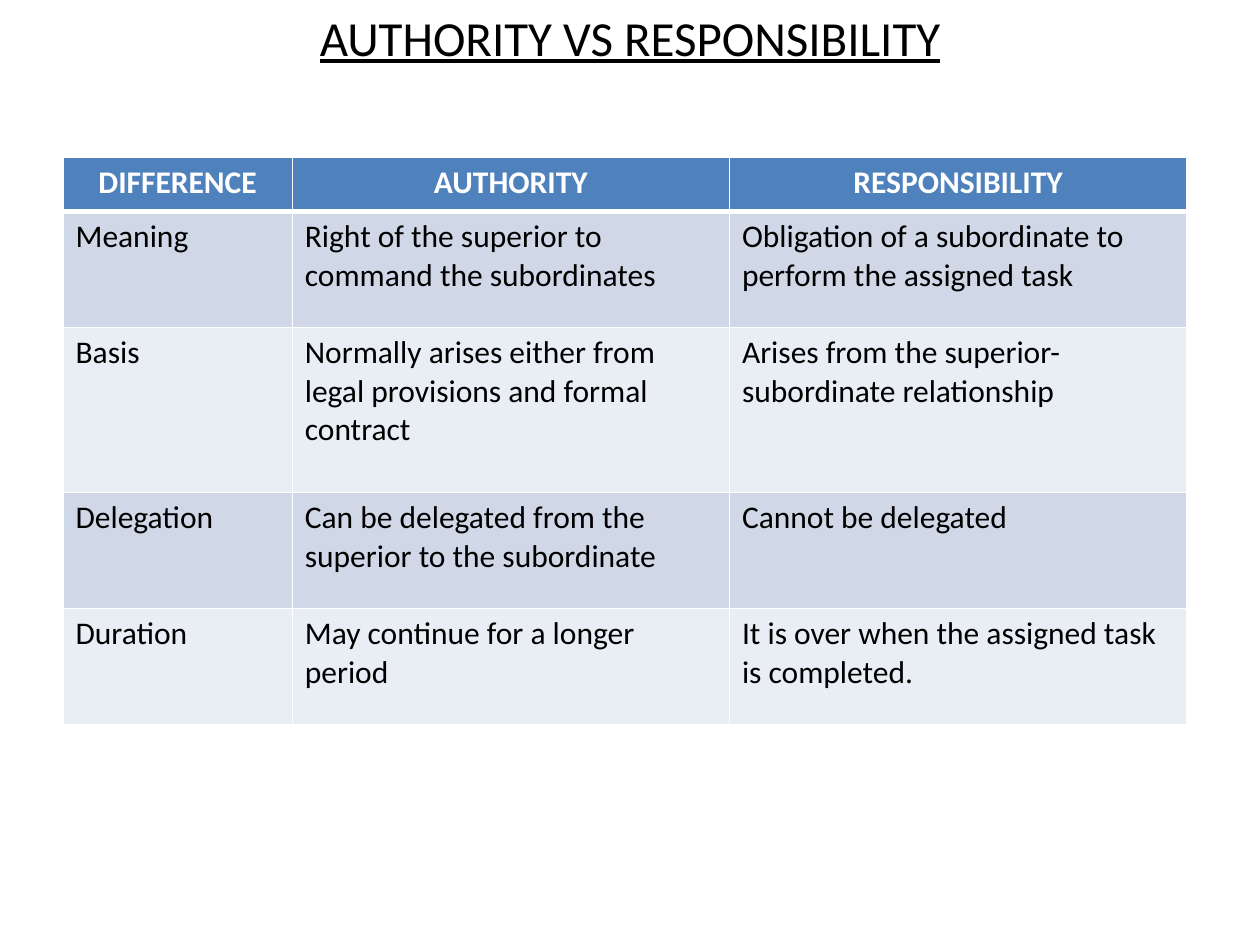
from dataclasses import dataclass

from lxml import etree
from pptx import Presentation
from pptx.dml.color import RGBColor
from pptx.enum.text import MSO_ANCHOR, PP_ALIGN
from pptx.oxml.ns import qn
from pptx.util import Inches, Pt

CENTER, LEFT = PP_ALIGN.CENTER, PP_ALIGN.LEFT
MIDDLE = MSO_ANCHOR.MIDDLE
BLANK_LAYOUT = 6
SLIDE_WIDTH, SLIDE_HEIGHT = Inches(10), Inches(7.5)


@dataclass(frozen=True)
class Theme:
    font: str = "Calibri"
    title_size: int = 28
    table_size: int = 18
    ink: str = "000000"
    white: str = "FFFFFF"
    header: str = "4F81BD"
    bands: tuple[str, str] = ("D0D8E8", "E9EDF4")
    thin_line: int = 1
    thick_line: int = 3


@dataclass(frozen=True)
class Comparison:
    difference: str
    authority: str
    responsibility: str

    def texts(self) -> tuple[str, str, str]:
        return self.difference, self.authority, self.responsibility


THEME = Theme()
MARGIN = 0.05  # share of the slide width
TITLE_HEIGHT = 0.077  # share of the slide height
TABLE_TOP = 1 / 6  # share of the slide height
COLUMN_WIDTHS = (1.82, 3.47, 3.63)
ROW_HEIGHTS = (0.43, 0.92, 1.31, 0.92, 0.92)

ROWS = (
    Comparison("DIFFERENCE", "AUTHORITY", "RESPONSIBILITY"),
    Comparison("Meaning", "Right of the superior to command the subordinates",
               "Obligation of a subordinate to perform the assigned task"),
    Comparison("Basis", "Normally arises either from legal provisions and formal contract",
               "Arises from the superior-subordinate relationship"),
    Comparison("Delegation", "Can be delegated from the superior to the subordinate",
               "Cannot be delegated"),
    Comparison("Duration", "May continue for a longer period",
               "It is over when the assigned task is completed."),
)


def write_text(text_frame, text: str, *, size: int, color: str = THEME.ink,
               align=LEFT, bold: bool = False, underline: bool = False) -> None:
    text_frame.word_wrap = True
    paragraph = text_frame.paragraphs[0]
    paragraph.alignment = align
    run = paragraph.add_run()
    run.text = text
    font = run.font
    font.name, font.size = THEME.font, Pt(size)
    font.bold, font.underline = bold, underline
    font.color.rgb = RGBColor.from_string(color)


def set_borders(cell, top: int, bottom: int) -> None:
    """Draw white borders; the lines must come before the fill in the cell."""
    properties = cell._tc.get_or_add_tcPr()
    widths = {"a:lnL": THEME.thin_line, "a:lnR": THEME.thin_line,
              "a:lnT": top, "a:lnB": bottom}
    for position, (tag, width) in enumerate(widths.items()):
        line = etree.Element(qn(tag), w=str(Pt(width)))
        fill = etree.SubElement(line, qn("a:solidFill"))
        etree.SubElement(fill, qn("a:srgbClr"), val=THEME.white)
        properties.insert(position, line)


def add_title(slide, text: str) -> None:
    box = slide.shapes.add_textbox(
        int(SLIDE_WIDTH * MARGIN), 0,
        int(SLIDE_WIDTH * (1 - 2 * MARGIN)), int(SLIDE_HEIGHT * TITLE_HEIGHT))
    box.text_frame.vertical_anchor = MIDDLE
    write_text(box.text_frame, text, size=THEME.title_size, align=CENTER, underline=True)


def add_comparison_table(slide, rows: tuple[Comparison, ...]) -> None:
    table = slide.shapes.add_table(
        len(rows), len(COLUMN_WIDTHS),
        int(SLIDE_WIDTH * MARGIN), int(SLIDE_HEIGHT * TABLE_TOP),
        Inches(sum(COLUMN_WIDTHS)), Inches(sum(ROW_HEIGHTS))).table
    for column, width in zip(table.columns, COLUMN_WIDTHS):
        column.width = Inches(width)
    for row, height in zip(table.rows, ROW_HEIGHTS):
        row.height = Inches(height)

    for row_index, comparison in enumerate(rows):
        is_header = row_index == 0
        background = THEME.header if is_header else THEME.bands[(row_index - 1) % 2]
        # A thick line parts the header from the first body row
        top = THEME.thick_line if row_index == 1 else THEME.thin_line
        bottom = THEME.thick_line if is_header else THEME.thin_line
        for column_index, text in enumerate(comparison.texts()):
            cell = table.cell(row_index, column_index)
            cell.fill.solid()
            cell.fill.fore_color.rgb = RGBColor.from_string(background)
            set_borders(cell, top, bottom)
            write_text(cell.text_frame, text, size=THEME.table_size, bold=is_header,
                       color=THEME.white if is_header else THEME.ink,
                       align=CENTER if is_header else LEFT)


def main() -> None:
    presentation = Presentation()
    presentation.slide_width, presentation.slide_height = SLIDE_WIDTH, SLIDE_HEIGHT
    slide = presentation.slides.add_slide(presentation.slide_layouts[BLANK_LAYOUT])

    # Heading
    add_title(slide, "AUTHORITY VS RESPONSIBILITY")
    # Comparison of the two terms
    add_comparison_table(slide, ROWS)

    presentation.save("out.pptx")


if __name__ == "__main__":
    main()
